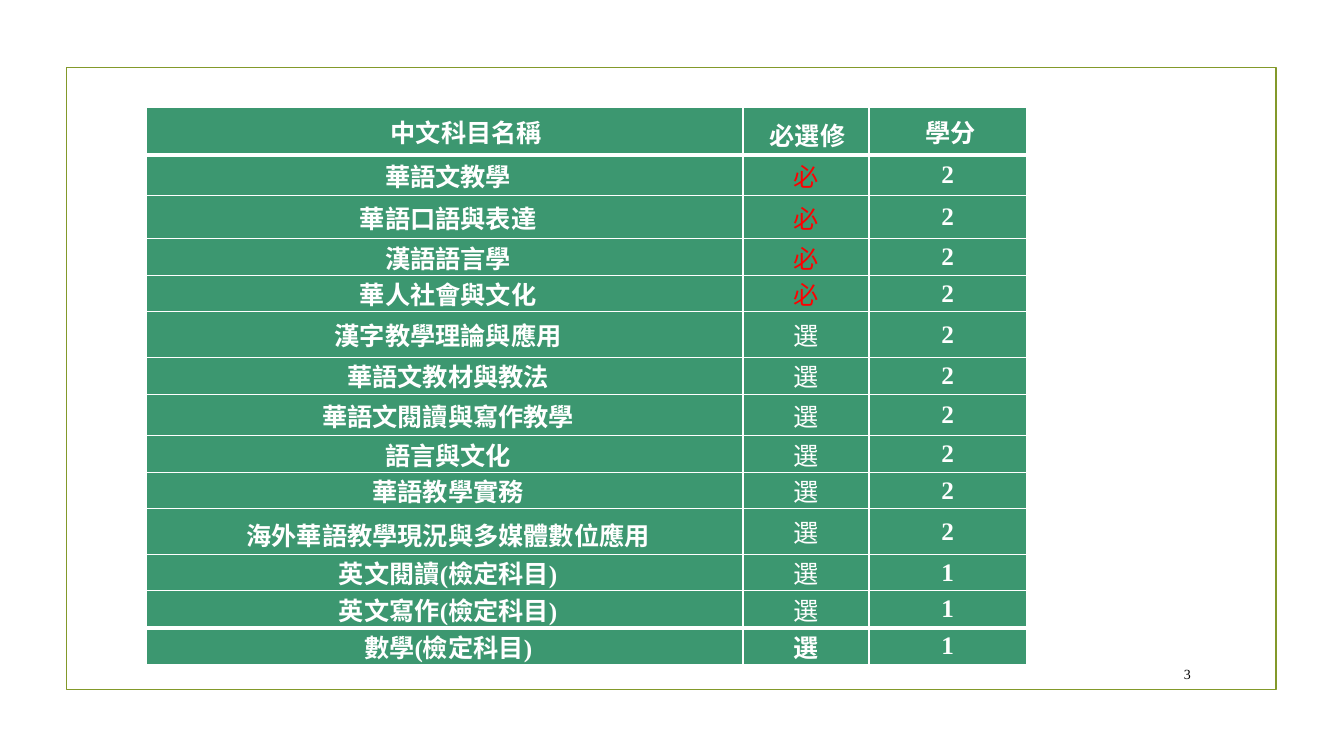
from lxml import etree
from pptx import Presentation
from pptx.dml.color import RGBColor
from pptx.enum.shapes import MSO_SHAPE
from pptx.enum.text import MSO_ANCHOR, PP_ALIGN
from pptx.oxml.ns import qn
from pptx.util import Inches, Pt

RECTANGLE = MSO_SHAPE.RECTANGLE
MIDDLE = MSO_ANCHOR.MIDDLE
CENTER, RIGHT = PP_ALIGN.CENTER, PP_ALIGN.RIGHT

FONT = "Times New Roman"
WHITE, RED, BLACK = "FFFFFF", "FF0000", "000000"
GREEN, OLIVE = "3C9770", "83992A"

COLUMN_WIDTHS = (5.92, 1.25, 1.56)
HEADER_HEIGHT = 0.47
CREDIT_EXTRA_SPACE = 2.7
NAME_INDENT = 0.07
LOOSE = 1.15

# course, required or elective, credits, row height, space before
COURSES = (
    ("華語文教學", "必", 2, 0.40, 5.8),
    ("華語口語與表達", "必", 2, 0.43, 7),
    ("漢語語言學", "必", 2, 0.35, 3.9),
    ("華人社會與文化", "必", 2, 0.28, 3.9),
    ("漢字教學理論與應用", "選", 2, 0.45, 7.5),
    ("華語文教材與教法", "選", 2, 0.37, 4.5),
    ("華語文閱讀與寫作教學", "選", 2, 0.41, 6),
    ("語言與文化", "選", 2, 0.32, 3.9),
    ("華語教學實務", "選", 2, 0.36, 4.2),
    ("海外華語教學現況與多媒體數位應用", "選", 2, 0.45, 7.8),
    ("英文閱讀(檢定科目)", "選", 1, 0.35, 3.9),
    ("英文寫作(檢定科目)", "選", 1, 0.37, 4.5),
    ("數學(檢定科目)", "選", 1, 0.35, 4),
)
LOOSE_COURSE = "海外華語教學現況與多媒體數位應用"


def rgb(color):
    return RGBColor.from_string(color)


def add_run(p, text, size, color, bold=False):
    r = p.add_run()
    r.text = text
    r.font.name = FONT
    r.font.size = Pt(size)
    r.font.bold = bold
    r.font.color.rgb = rgb(color)


def set_borders(cell, top=1, bottom=1):
    """Draw white cell borders; they must precede the fill in the XML."""
    tc_pr = cell._tc.get_or_add_tcPr()
    sides = (("a:lnL", 1), ("a:lnR", 1), ("a:lnT", top), ("a:lnB", bottom))
    for i, (tag, width) in enumerate(sides):
        ln = etree.Element(qn(tag), w=str(Pt(width)))
        fill = etree.SubElement(ln, qn("a:solidFill"))
        etree.SubElement(fill, qn("a:srgbClr"), val=WHITE)
        tc_pr.insert(i, ln)


def fill_cell(cell, text, space=0, color=WHITE, bold=True, left=0,
              first=0, spacing=None):
    cell.margin_left = cell.margin_right = 0
    cell.margin_top = cell.margin_bottom = 0
    cell.vertical_anchor = MIDDLE
    cell.fill.solid()
    cell.fill.fore_color.rgb = rgb(GREEN)
    p = cell.text_frame.paragraphs[0]
    p.alignment = CENTER
    if space:
        p.space_before = Pt(space)
    if spacing:
        p.line_spacing = spacing
    p_pr = p._p.get_or_add_pPr()
    p_pr.set("marL", str(Inches(left)))
    p_pr.set("indent", str(Inches(first)))
    add_run(p, text, 18, color, bold)


def add_course_table(slide):
    heights = [HEADER_HEIGHT] + [course[3] for course in COURSES]
    table = slide.shapes.add_table(
        len(heights), len(COLUMN_WIDTHS), Inches(1.45), Inches(1.07),
        Inches(sum(COLUMN_WIDTHS)), Inches(sum(heights))).table
    for column, width in zip(table.columns, COLUMN_WIDTHS):
        column.width = Inches(width)
    for row, height in zip(table.rows, heights):
        row.height = Inches(height)

    name, kind, credit = table.rows[0].cells
    fill_cell(name, "中文科目名稱", 8.2, left=0.43)
    fill_cell(kind, "必選修", left=0.11, first=-0.08, spacing=LOOSE)
    fill_cell(credit, "學分", 8.2, left=0.06)

    last = len(COURSES)
    for i, (course, choice, points, _, space) in enumerate(COURSES, 1):
        name, kind, credit = table.rows[i].cells
        if course == LOOSE_COURSE:
            fill_cell(name, course, left=NAME_INDENT, spacing=LOOSE)
        else:
            fill_cell(name, course, space, left=NAME_INDENT)
        fill_cell(kind, choice, space, RED if choice == "必" else WHITE,
                  bold=i == last)
        fill_cell(credit, str(points), space + CREDIT_EXTRA_SPACE)

    for i, row in enumerate(table.rows):
        for cell in row.cells:
            set_borders(cell, top=3 if i in (1, last) else 1,
                        bottom=3 if i in (0, last - 1) else 1)


def add_frame(slide):
    sp = slide.shapes.add_shape(RECTANGLE, Inches(0.66), Inches(0.67),
                                Inches(12), Inches(6.17))
    sp.shadow.inherit = False
    sp.fill.background()
    sp.line.color.rgb = rgb(OLIVE)
    sp.line.width = Pt(1.25)


def add_page_number(slide, number):
    sp = slide.shapes.add_textbox(Inches(11.32), Inches(6.53),
                                  Inches(0.59), Inches(0.31))
    tf = sp.text_frame
    tf.word_wrap = True
    tf.vertical_anchor = MIDDLE
    p = tf.paragraphs[0]
    p.alignment = RIGHT
    add_run(p, str(number), 10, BLACK)


def main():
    prs = Presentation()
    prs.slide_width, prs.slide_height = Inches(13.33), Inches(7.5)
    slide = prs.slides.add_slide(prs.slide_layouts[6])
    add_frame(slide)
    add_course_table(slide)
    add_page_number(slide, 3)
    prs.save("out.pptx")


if __name__ == "__main__":
    main()
